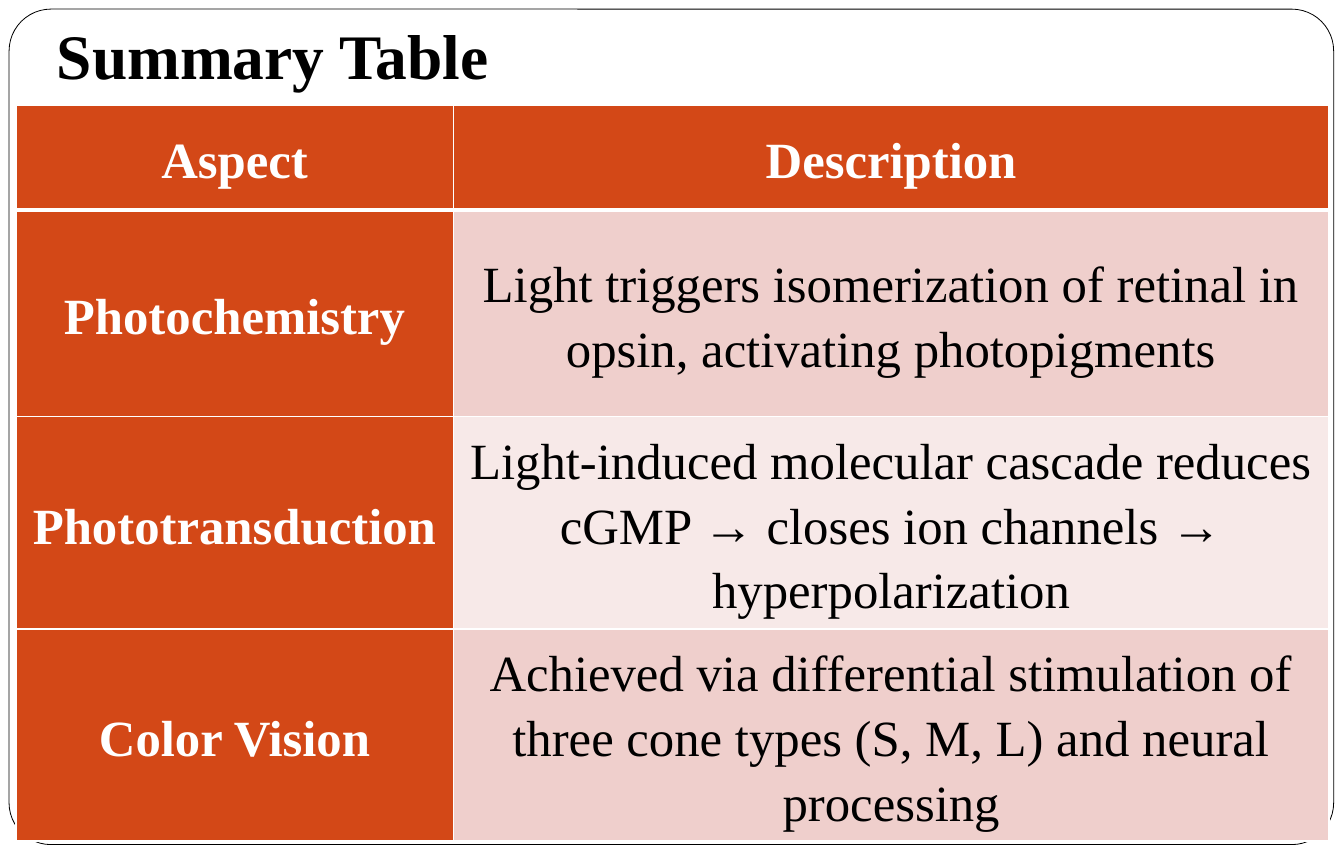
"""Build the summary table slide on vision."""
from lxml.etree import SubElement
from pptx import Presentation
from pptx.dml.color import RGBColor
from pptx.enum.shapes import MSO_SHAPE
from pptx.enum.text import MSO_ANCHOR, PP_ALIGN
from pptx.oxml.ns import qn
from pptx.util import Inches, Pt


def rgb(color):
    return RGBColor.from_string(color)


def add_text(p, text, size, color, bold):
    r = p.add_run()
    r.text = text
    r.font.name = "Times New Roman"
    r.font.size = Pt(size)
    r.font.bold = bold
    r.font.color.rgb = rgb(color)


ROWS = [
    ("Aspect", "Description"),
    ("Photochemistry", "Light triggers isomerization of retinal in opsin, activating photopigments"),
    ("Phototransduction", "Light-induced molecular cascade reduces cGMP → closes ion channels → hyperpolarization"),
    ("Color Vision", "Achieved via differential stimulation of three cone types (S, M, L) and neural processing"),
]
ACCENT = "D34817"
BANDS = ["F7E9E8", "EFCFCC"]

prs = Presentation()
prs.slide_width, prs.slide_height = Inches(11.77), Inches(7.5)
s = prs.slides.add_slide(prs.slide_layouts[6])

frame = s.shapes.add_shape(MSO_SHAPE.ROUNDED_RECTANGLE, Inches(0.08), Inches(0.08), Inches(11.6), Inches(7.32))
frame.adjustments[0] = 0.05
frame.shadow.inherit = False
frame.fill.solid()
frame.fill.fore_color.rgb = rgb("FFFFFF")
frame.line.color.rgb = rgb("000000")
frame.line.width = Pt(0.5)

title = s.shapes.add_textbox(Inches(0.4), Inches(0.08), Inches(10.6), Inches(0.83))
tf = title.text_frame
tf.word_wrap = True
tf.vertical_anchor = MSO_ANCHOR.BOTTOM
tf.margin_bottom = Inches(0.1)
add_text(tf.paragraphs[0], "Summary Table", 40, "000000", True)

table = s.shapes.add_table(len(ROWS), 2, Inches(0.14), Inches(0.92), Inches(11.5), Inches(6.35)).table
for col, width in zip(table.columns, (3.83, 7.67)):
    col.width = Inches(width)
for i, texts in enumerate(ROWS):
    table.rows[i].height = Inches(1.81 if i else 0.92)
    for j, text in enumerate(texts):
        cell = table.cell(i, j)
        is_head = i == 0 or j == 0
        cell.vertical_anchor = MSO_ANCHOR.MIDDLE
        cell.margin_left = cell.margin_right = cell.margin_top = cell.margin_bottom = Inches(0.01)
        for side in "LRTB":
            thick = (i, side) in [(0, "B"), (1, "T")]
            ln = SubElement(cell._tc.get_or_add_tcPr(), qn(f"a:ln{side}"), w=str(Pt(3 if thick else 1)))
            SubElement(SubElement(ln, qn("a:solidFill")), qn("a:srgbClr"), val="FFFFFF")
        cell.fill.solid()
        cell.fill.fore_color.rgb = rgb(ACCENT if is_head else BANDS[i % 2])
        p = cell.text_frame.paragraphs[0]
        p.alignment = PP_ALIGN.CENTER
        p.line_spacing = 1.15
        p.space_after = Pt(8)
        add_text(p, text, 32, "FFFFFF" if is_head else "000000", is_head)

prs.save("out.pptx")
